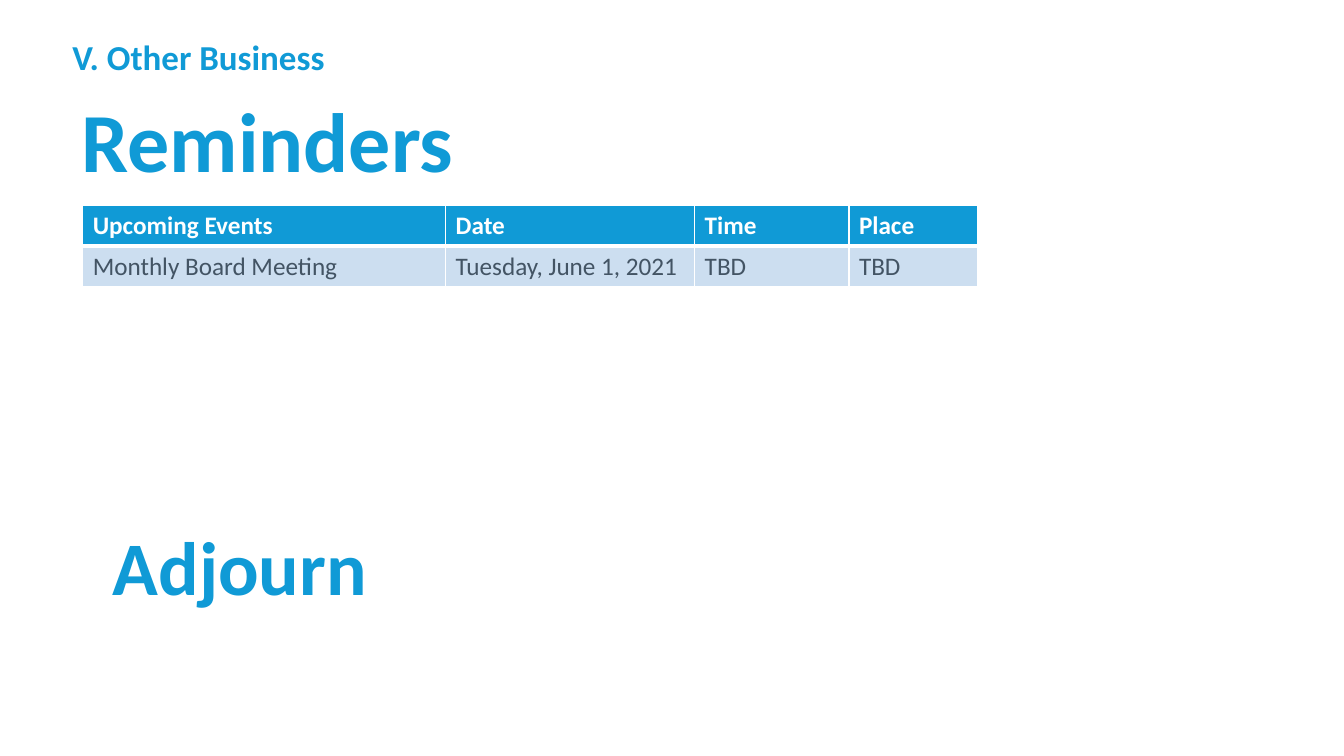
from lxml import etree
from pptx import Presentation
from pptx.dml.color import RGBColor
from pptx.enum.text import MSO_ANCHOR, PP_ALIGN
from pptx.oxml.ns import qn
from pptx.util import Inches, Pt

BLUE = "109AD6"
PALE_BLUE = "CCDEF0"
SLATE = "435464"
WHITE = "FFFFFF"

COLUMN_WIDTHS = [3.6, 2.47, 1.53, 1.28]
ROW_HEIGHT = 0.4
EVENTS = [
    ["Upcoming Events", "Date", "Time", "Place"],
    ["Monthly Board Meeting", "Tuesday, June 1, 2021", "TBD", "TBD"],
]


def rgb(value):
    return RGBColor.from_string(value)


def write(tf, text, size=18, color=BLUE, bold=True, align=PP_ALIGN.LEFT, spacing=1.0):
    p = tf.paragraphs[0]
    p.alignment = align
    p.line_spacing = spacing
    r = p.add_run()
    r.text = text
    r.font.name = "Calibri"
    r.font.size = Pt(size)
    r.font.bold = bold
    r.font.color.rgb = rgb(color)


def add_text(s, text, left, top, width, height, anchor=MSO_ANCHOR.TOP,
             bottom_inset=0.05, **text_format):
    box = s.shapes.add_textbox(Inches(left), Inches(top), Inches(width), Inches(height))
    tf = box.text_frame
    tf.word_wrap = True
    tf.vertical_anchor = anchor
    tf.margin_bottom = Inches(bottom_inset)
    write(tf, text, **text_format)


def set_borders(cell, color, **widths):
    # Border elements come before the cell fill, in the order given
    tc_pr = cell._tc.get_or_add_tcPr()
    for i, (side, width) in enumerate(widths.items()):
        ln = etree.Element(qn(f"a:ln{side}"), w=str(Pt(width)))
        fill = etree.SubElement(ln, qn("a:solidFill"))
        etree.SubElement(fill, qn("a:srgbClr"), val=color)
        tc_pr.insert(i, ln)


def add_events_table(s, left, top):
    frame = s.shapes.add_table(
        len(EVENTS), len(COLUMN_WIDTHS), Inches(left), Inches(top),
        Inches(sum(COLUMN_WIDTHS)), Inches(ROW_HEIGHT * len(EVENTS)))
    table = frame.table
    for column, width in zip(table.columns, COLUMN_WIDTHS):
        column.width = Inches(width)
    for i, events in enumerate(EVENTS):
        header = i == 0
        for j, text in enumerate(events):
            cell = table.cell(i, j)
            cell.fill.solid()
            cell.fill.fore_color.rgb = rgb(BLUE if header else PALE_BLUE)
            write(cell.text_frame, text, color=WHITE if header else SLATE, bold=header)
            # A thick rule separates the header from the events
            set_borders(cell, WHITE, L=1, R=1, T=1 if header else 3, B=3 if header else 1)


def main():
    prs = Presentation()
    prs.slide_width = Inches(13.33)
    prs.slide_height = Inches(7.5)
    s = prs.slides.add_slide(prs.slide_layouts[6])

    # Reminders and upcoming events
    add_text(s, "Reminders", 0.71, 0.86, 9.95, 1.17,
             anchor=MSO_ANCHOR.MIDDLE, size=60, spacing=0.9)
    add_events_table(s, 0.82, 2.04)

    # Agenda section
    add_text(s, "V. Other Business", 0.62, 0.3, 11.76, 0.82, size=25)

    # Closing item, raised within its box
    add_text(s, "Adjourn", 0.62, 5.39, 3.52, 1.24, anchor=MSO_ANCHOR.MIDDLE,
             bottom_inset=0.73, size=54, align=PP_ALIGN.CENTER, spacing=0.9)

    prs.save("out.pptx")


if __name__ == "__main__":
    main()
